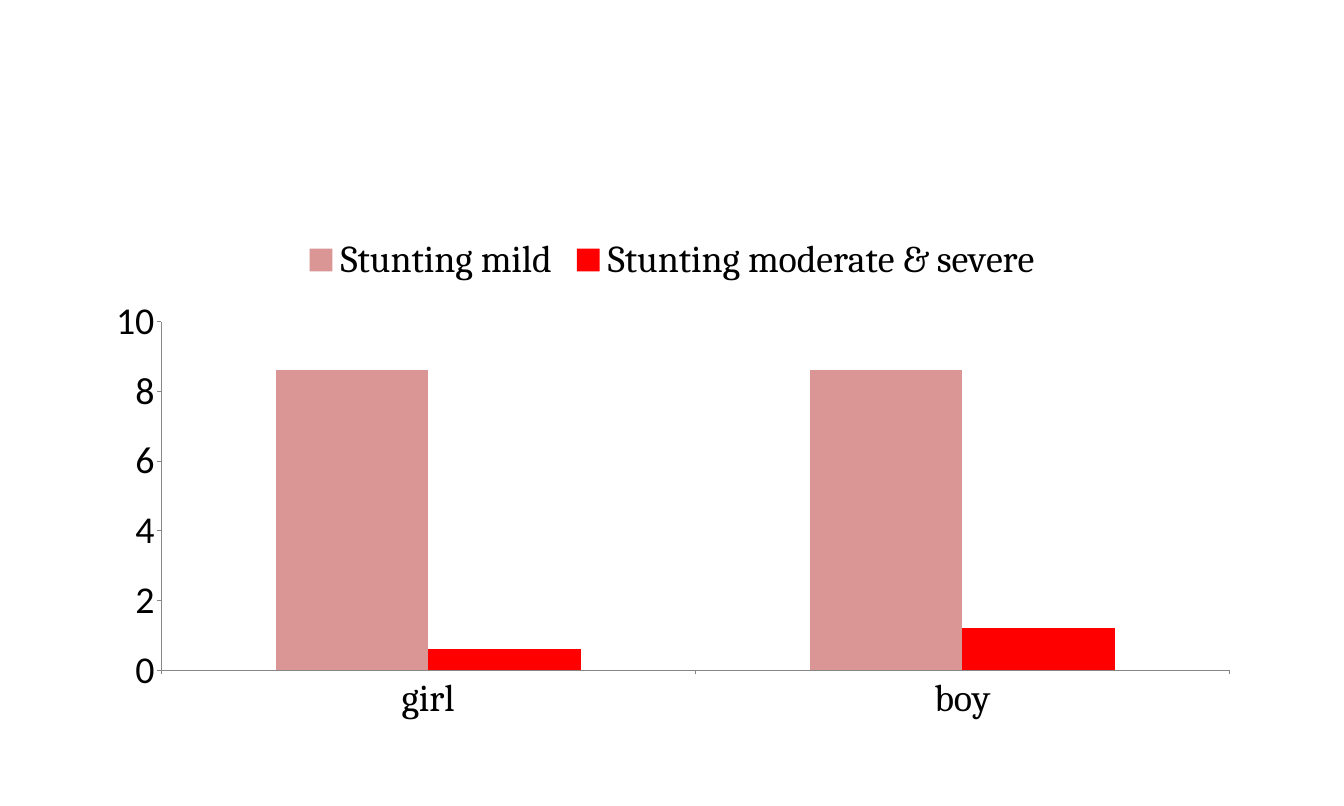
from lxml import etree
from pptx import Presentation
from pptx.chart.data import CategoryChartData
from pptx.dml.color import RGBColor
from pptx.enum.chart import XL_CHART_TYPE, XL_LEGEND_POSITION, XL_TICK_MARK
from pptx.oxml.ns import qn
from pptx.util import Inches, Pt

WHITE = RGBColor(0xFF, 0xFF, 0xFF)
BLACK = RGBColor(0x00, 0x00, 0x00)
AXIS_GRAY = RGBColor(0x86, 0x86, 0x86)
MILD_PINK = RGBColor(0xD9, 0x96, 0x94)
SEVERE_RED = RGBColor(0xFF, 0x00, 0x00)


def format_text(text, font="Calibri", size=40, color=BLACK):
    text.font.name = font
    text.font.size = Pt(size)
    text.font.bold = False
    text.font.color.rgb = color


class ChartSlide:
    COLS = ROWS = 100
    LABEL_FONT = "Cambria"

    def __init__(self, prs):
        self.prs = prs
        self.s = prs.slides.add_slide(prs.slide_layouts[6])
        self.s.background.fill.solid()
        self.s.background.fill.fore_color.rgb = WHITE

    def box(self, col, row, cols, rows):
        w = self.prs.slide_width / self.COLS
        h = self.prs.slide_height / self.ROWS
        return [int(v) for v in (col * w, row * h, cols * w, rows * h)]

    def column_chart(self, box, categories, series, plot_area):
        data = CategoryChartData()
        data.categories = categories
        for name, values, _ in series:
            data.add_series(name, values)
        chart = self.s.shapes.add_chart(
            XL_CHART_TYPE.COLUMN_CLUSTERED, *self.box(*box), data).chart
        chart.has_title = False
        format_text(chart)
        plot = chart.plots[0]
        plot.gap_width = 150
        plot.overlap = 0
        plot.vary_by_categories = False
        for bars, (_, _, color) in zip(plot.series, series):
            bars.format.fill.solid()
            bars.format.fill.fore_color.rgb = color
            bars.invert_if_negative = False
        self.place_plot(chart, plot_area)
        self.axis(chart.category_axis, font=self.LABEL_FONT)
        self.axis(chart.value_axis)
        self.legend(chart)
        return chart

    def axis(self, axis, **text_format):
        axis.has_major_gridlines = False
        axis.major_tick_mark = XL_TICK_MARK.OUTSIDE
        axis.minor_tick_mark = XL_TICK_MARK.NONE
        axis.format.line.color.rgb = AXIS_GRAY
        axis.format.line.width = Pt(0.75)
        format_text(axis.tick_labels, **text_format)

    def legend(self, chart):
        chart.has_legend = True
        chart.legend.position = XL_LEGEND_POSITION.TOP
        chart.legend.include_in_layout = False
        format_text(chart.legend, font=self.LABEL_FONT)

    def place_plot(self, chart, shares):
        area = chart.plots[0]._element.getparent()
        for old in area.findall(qn("c:layout")):
            area.remove(old)
        layout = etree.Element(qn("c:layout"))
        area.insert(0, layout)
        manual = etree.SubElement(layout, qn("c:manualLayout"))
        settings = [("layoutTarget", "inner"), ("xMode", "edge"), ("yMode", "edge")]
        for tag, value in settings + list(zip("xywh", shares)):
            etree.SubElement(manual, qn(f"c:{tag}")).set("val", str(value))


def main():
    prs = Presentation()
    prs.slide_width = Inches(19.69)
    prs.slide_height = Inches(11.81)
    slide = ChartSlide(prs)
    chart = slide.column_chart(
        box=(6.8, 28, 86.4, 62.7),
        categories=["girl", "boy"],
        series=[
            ("Stunting mild", (8.6, 8.6), MILD_PINK),
            ("Stunting moderate & severe", (0.6, 1.2), SEVERE_RED),
        ],
        plot_area=(0.06, 0.19, 0.92, 0.69),
    )
    chart.value_axis.minimum_scale = 0
    chart.value_axis.maximum_scale = 10
    chart.value_axis.major_unit = 2
    prs.save("out.pptx")


if __name__ == "__main__":
    main()
